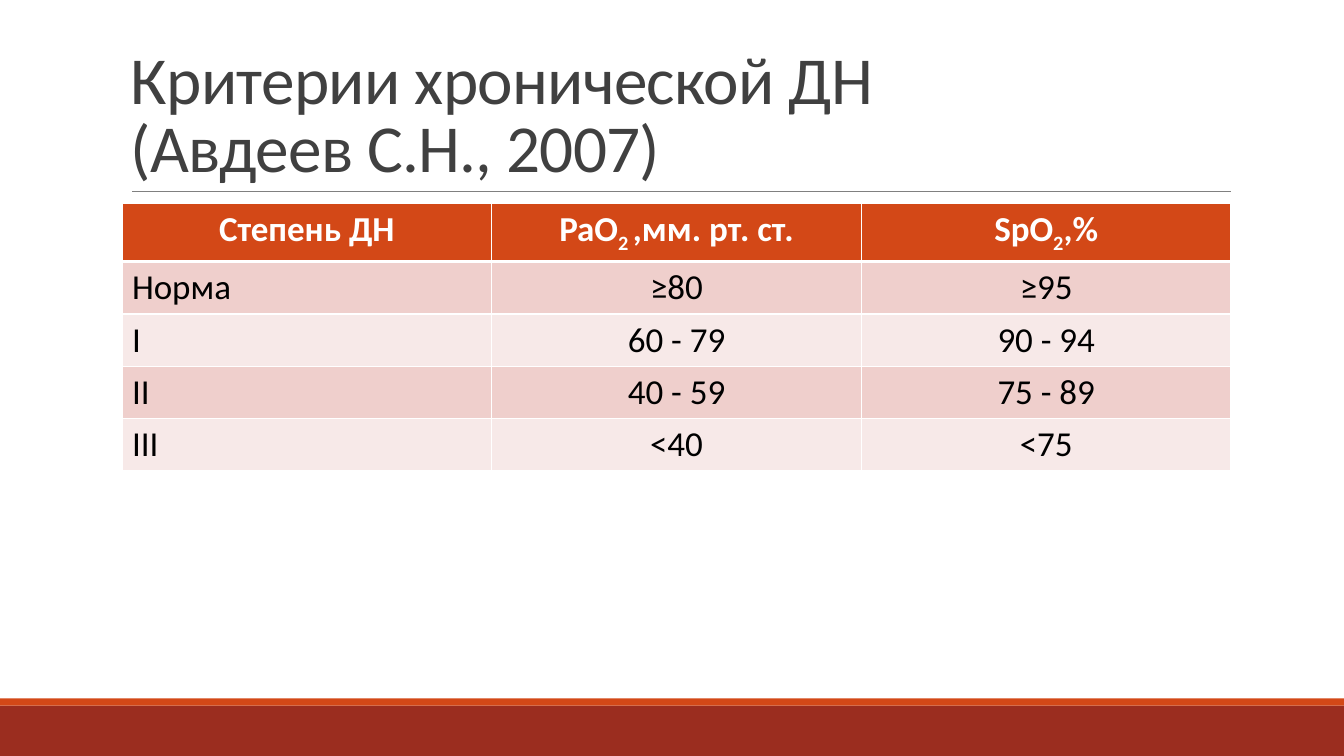
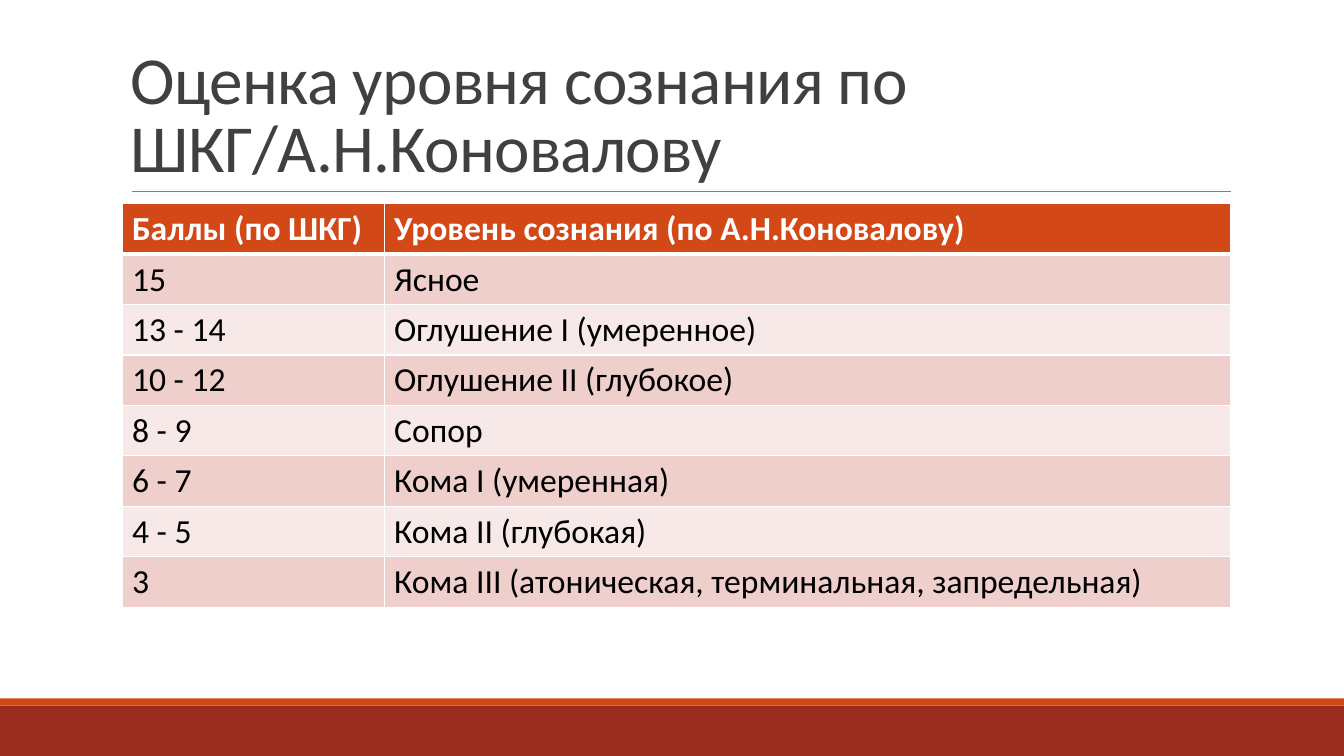
from lxml import etree
from pptx import Presentation
from pptx.dml.color import RGBColor
from pptx.enum import shapes, text
from pptx.oxml import ns
from pptx.util import Inches, Pt

FONT = "Calibri"
WHITE, BLACK, TITLE, RULE = "FFFFFF", "000000", "404040", "808080"
ORANGE, BRICK = "D34817", "9B2D1F"
ROW_FILLS = "EFCFCC", "F7E9E8"
LEFT, WIDTH = 1.2, 11
SLIDE_W, SLIDE_H = 13.33, 7.5
A = ns.qn("a:p")[:-1]


def rgb(value):
    return RGBColor.from_string(value)


def write(p, content, size, color, bold=False, align="LEFT", line=None, spacing=None):
    """Fill a paragraph; newlines break the line, text between tildes is subscript."""
    p.alignment = getattr(text.PP_ALIGN, align)
    if line:
        p.line_spacing = line
    for row, row_text in enumerate(content.split("\n")):
        if row:
            p.add_line_break()
        for i, piece in enumerate(row_text.split("~")):
            r = p.add_run()
            r.text = piece
            r.font.name, r.font.size, r.font.bold = FONT, Pt(size), bold
            r.font.color.rgb = rgb(color)
            props = r._r.get_or_add_rPr()
            if i % 2:
                props.set("baseline", "-25000")
            if spacing:
                props.set("spc", str(int(spacing * 100)))


def add_band(s, top, height, color):
    band = s.shapes.add_shape(shapes.MSO_SHAPE.RECTANGLE, 0, Inches(top),
                              Inches(SLIDE_W), Inches(height))
    band.shadow.inherit = False
    band.fill.solid()
    band.fill.fore_color.rgb = rgb(color)
    band.line.fill.background()


def add_rule(s, left, top, width):
    rule = s.shapes.add_connector(shapes.MSO_CONNECTOR.STRAIGHT, Inches(left), Inches(top),
                                  Inches(left + width), Inches(top))
    rule.line.color.rgb = rgb(RULE)
    rule.line.width = Pt(0.5)
    etree.SubElement(rule._element.spPr, A + "effectLst")


def add_title(s, title, left, top, width, height):
    box = s.shapes.add_textbox(Inches(left), Inches(top), Inches(width), Inches(height))
    tf = box.text_frame
    tf.word_wrap = True
    tf.vertical_anchor = text.MSO_ANCHOR.BOTTOM
    write(tf.paragraphs[0], title, 48, TITLE, line=0.85, spacing=-0.5)


def add_frame(prs, title):
    """Add a slide with the shared bands, title and rule."""
    s = prs.slides.add_slide(prs.slide_layouts[6])
    add_band(s, 7, 0.5, BRICK)
    add_band(s, 6.93, 0.07, ORANGE)
    add_rule(s, LEFT + 0.11, 1.9, WIDTH - 0.1)
    add_title(s, title, LEFT, 0.31, WIDTH, 1.59)
    return s


def style_cell(cell, fill, top=1, bottom=1):
    """Give a cell white borders, then its fill, in the order the schema asks for."""
    tcPr = cell._tc.get_or_add_tcPr()
    for side, width in zip("LRTB", (1, 1, top, bottom)):
        ln = etree.SubElement(tcPr, A + "ln" + side, w=str(Pt(width)))
        solid = etree.SubElement(ln, A + "solidFill")
        etree.SubElement(solid, A + "srgbClr", val=WHITE)
    cell.fill.solid()
    cell.fill.fore_color.rgb = rgb(fill)


def add_grid(s, rows, left, top, col_widths, row_height, size, aligns, head_aligns):
    frame = s.shapes.add_table(len(rows), len(col_widths), Inches(left), Inches(top),
                               Inches(sum(col_widths)), Inches(row_height * len(rows)))
    table = frame.table
    for column, width in zip(table.columns, col_widths):
        column.width = Inches(width)
    for i, row in enumerate(rows):
        head = i == 0
        for j, content in enumerate(row):
            cell = table.cell(i, j)
            style_cell(cell, ORANGE if head else ROW_FILLS[(i - 1) % 2],
                       top=3 if i == 1 else 1, bottom=3 if head else 1)
            write(cell.text_frame.paragraphs[0], content, size, WHITE if head else BLACK,
                  bold=head, align=(head_aligns if head else aligns)[j])


def add_table_slide(prs, title, rows, col_widths, row_height, size, aligns, head_aligns):
    s = add_frame(prs, title)
    add_grid(s, rows, LEFT + 0.01, 2.02, col_widths, row_height, size, aligns, head_aligns)


CRITERIA = [
    ("Степень ДН", "PaO~2 ~,мм. рт. ст.", "SрO~2~,%"),
    ("Норма", "≥80", "≥95"),
    ("I", "60 - 79", "90 - 94"),
    ("II", "40 - 59", "75 - 89"),
    ("III", "<40", "<75"),
]
CONSCIOUSNESS = [
    ("Баллы (по ШКГ)", "Уровень сознания (по А.Н.Коновалову)"),
    ("15", "Ясное"),
    ("13 - 14", "Оглушение I (умеренное)"),
    ("10 - 12", "Оглушение II (глубокое)"),
    ("8 - 9", "Сопор"),
    ("6 - 7", "Кома I (умеренная)"),
    ("4 - 5", "Кома II (глубокая)"),
    ("3", "Кома III (атоническая, терминальная, запредельная)"),
]


def main():
    prs = Presentation()
    prs.slide_width, prs.slide_height = Inches(SLIDE_W), Inches(SLIDE_H)
    add_table_slide(prs, "Критерии хронической ДН\n(Авдеев С.Н., 2007)", CRITERIA,
                    [WIDTH / 3] * 3, 0.52, 25,
                    ["LEFT", "CENTER", "CENTER"], ["CENTER"] * 3)
    add_table_slide(prs, "Оценка уровня сознания по ШКГ/А.Н.Коновалову", CONSCIOUSNESS,
                    [2.6, 8.4], 0.5, 24, ["LEFT"] * 2, ["LEFT"] * 2)
    prs.save("out.pptx")


if __name__ == "__main__":
    main()
